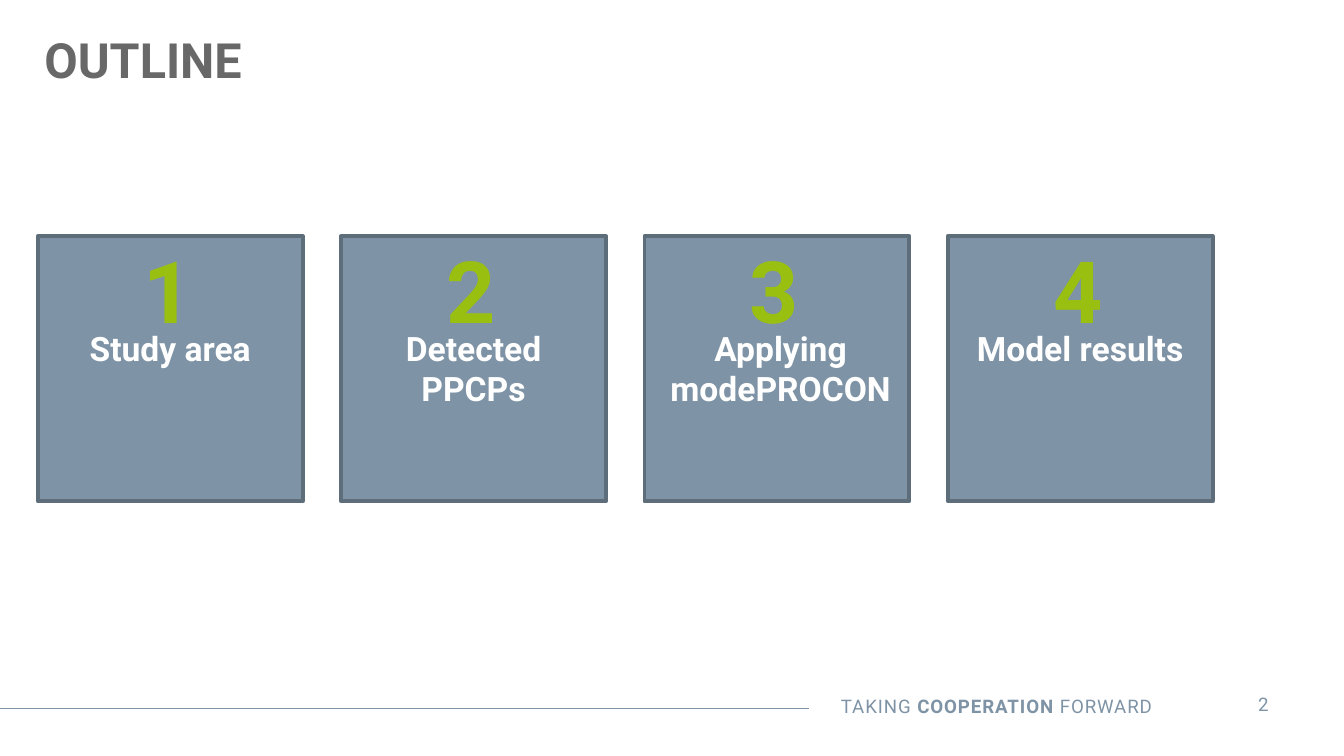
from lxml.etree import SubElement
from pptx import Presentation
from pptx.dml.color import RGBColor
from pptx.enum.shapes import MSO_CONNECTOR, MSO_SHAPE
from pptx.enum.text import MSO_ANCHOR, PP_ALIGN
from pptx.oxml.ns import qn
from pptx.util import Pt

TITLE = "OUTLINE"
# topic, sideways shift of its label
TOPICS = [
    ("Study area", 0),
    ("Detected PPCPs", 0),
    ("Applying modePROCON", 2),
    ("Model results", 0),
]
FOOTER = [("TAKING ", False), ("COOPERATION", True), (" FORWARD", False)]
PAGE_NUMBER = "2"

FONT = "Roboto"
SLATE = RGBColor(0x7E, 0x93, 0xA5)
DARK_SLATE = RGBColor(0x5D, 0x6D, 0x7A)
GREY = RGBColor(0x68, 0x68, 0x68)
GREEN = RGBColor(0x99, 0xC0, 0x11)
WHITE = RGBColor(0xFF, 0xFF, 0xFF)

CARD_LEFT, CARD_TOP, CARD_SIZE, CARD_PITCH = 20.2, 126.6, 142, 162.5
LABEL_TOP, NUMBER_TOP, NUMBER_INSET = 172, 124.6, 50.7


def add_text(shapes, box, runs, size, color, align=PP_ALIGN.LEFT,
             margins=(7.2, 3.6), wrap=True):
    """Add a one-paragraph text box; runs are (text, bold) pairs."""
    text_box = shapes.add_textbox(*map(Pt, box))
    frame = text_box.text_frame
    frame.word_wrap = wrap
    frame.margin_left = frame.margin_right = Pt(margins[0])
    frame.margin_top = frame.margin_bottom = Pt(margins[1])
    paragraph = frame.paragraphs[0]
    paragraph.alignment = align
    for text, bold in runs:
        run = paragraph.add_run()
        run.text = text
        run.font.name = FONT
        run.font.size = Pt(size)
        run.font.bold = bold
        run.font.color.rgb = color
    return text_box


def add_card(slide, index, topic, shift):
    left = CARD_LEFT + index * CARD_PITCH
    shapes = slide.shapes.add_group_shape().shapes
    card = shapes.add_shape(MSO_SHAPE.RECTANGLE, Pt(left), Pt(CARD_TOP),
                            Pt(CARD_SIZE), Pt(CARD_SIZE))
    card.shadow.inherit = False
    card.fill.solid()
    card.fill.fore_color.rgb = SLATE
    card.line.color.rgb = DARK_SLATE
    card.line.width = Pt(2)
    add_text(shapes, (left + shift, LABEL_TOP, CARD_SIZE, 51),
             [(topic, True)], 18, WHITE, PP_ALIGN.CENTER)
    add_text(shapes, (left + NUMBER_INSET, NUMBER_TOP, 28, 62),
             [(str(index + 1), True)], 46, GREEN, margins=(5.8, 2.9))


def add_footer(slide):
    rule = slide.shapes.add_connector(MSO_CONNECTOR.STRAIGHT, Pt(-0.7),
                                      Pt(379.5), Pt(433.5), Pt(379.5))
    rule.line.color.rgb = SLATE
    rule.line.width = Pt(0.75)
    SubElement(rule._element.spPr, qn("a:effectLst"))

    slogan = add_text(slide.shapes, (286.5, 368.6, 337.7, 19.4), FOOTER,
                      10, SLATE, PP_ALIGN.RIGHT)
    for run in slogan.text_frame.paragraphs[0].runs:
        run.font._element.set("spc", "50")
    add_text(slide.shapes, (651.6, 365, 50.4, 26.6), [(PAGE_NUMBER, False)],
             10, SLATE, PP_ALIGN.CENTER, (14.4, 7.2), wrap=False)


def main():
    presentation = Presentation()
    presentation.slide_width, presentation.slide_height = Pt(720), Pt(405)
    slide = presentation.slides.add_slide(presentation.slide_layouts[6])

    add_footer(slide)
    title = add_text(slide.shapes, (-0.7, 8.6, 564.5, 46), [(TITLE, True)],
                     26, GREY)
    title.text_frame.margin_left = Pt(24.5)
    title.text_frame.vertical_anchor = MSO_ANCHOR.MIDDLE
    for index, (topic, shift) in enumerate(TOPICS):
        add_card(slide, index, topic, shift)

    presentation.save("out.pptx")


if __name__ == "__main__":
    main()
